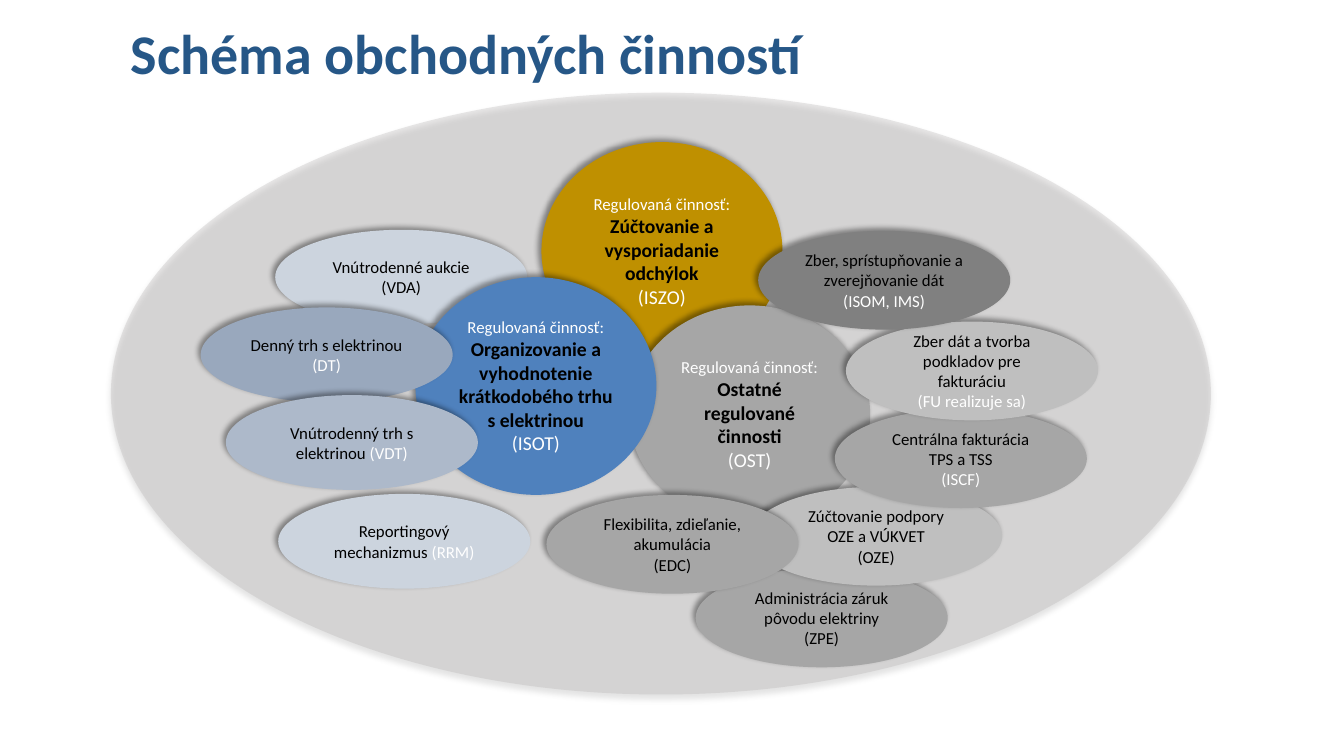
from pptx import Presentation
from pptx.dml.color import RGBColor as Rgb
from pptx.enum.shapes import MSO_SHAPE as Shape
from pptx.enum.text import MSO_ANCHOR as Anchor, PP_ALIGN as Align
from pptx.oxml import parse_xml
from pptx.oxml.ns import nsdecls
from pptx.util import Inches, Pt

COLORS = {
    "title": "265787", "black": "000000", "white": "FFFFFF", "backdrop": "AFABAB",
    "gold": "BF9000", "blue": "4F81BD", "pale": "CCD4DE", "slate": "99A8BD",
    "mist": "ADB9CA", "dark": "808080", "gray": "A6A6A6", "silver": "BFBFBF",
}
SMALL = {"size": Pt(12), "bold": False}
STRONG = {"size": Pt(14), "bold": True}
PLAIN = {"size": Pt(14), "bold": False}
TITLE = {"size": Pt(40), "bold": True}
CIRCLE = (2.39, 2.16)
LEFT_OVAL = (2.5, 0.94)
RIGHT_OVAL = (2.5, 0.98)


class SchemeSlide:
    """Draws the elements of the business scheme on one slide."""

    def __init__(self, page, font="Calibri"):
        self.page = page
        self.font = font

    def fill_text(self, frame, paragraphs, align, **margins):
        frame.word_wrap = True
        for name, value in margins.items():
            setattr(frame, name, Inches(value))
        for index, spans in enumerate(paragraphs):
            para = frame.add_paragraph() if index else frame.paragraphs[0]
            para.alignment = align
            for text, color, style in spans:
                span = para.add_run()
                span.text = text
                span.font.name = self.font
                span.font.color.rgb = Rgb.from_string(COLORS[color])
                for name, value in style.items():
                    setattr(span.font, name, value)

    def title(self, text, left, top, width, height):
        box = self.page.shapes.add_textbox(*map(Inches, (left, top, width, height)))
        box.text_frame.vertical_anchor = Anchor.BOTTOM
        self.fill_text(box.text_frame, [[(text, "title", TITLE)]], Align.LEFT)
        box.text_frame.paragraphs[0].line_spacing = 0.9

    def ellipse(self, place, size, color, angle=225, opacity=100):
        oval = self.page.shapes.add_shape(Shape.OVAL, *map(Inches, place + size))
        oval.fill.solid()
        oval.fill.fore_color.rgb = Rgb.from_string(COLORS[color])
        oval.line.fill.background()
        oval.shadow.inherit = False
        properties = oval._element.spPr
        if opacity < 100:
            tint = properties.xpath("a:solidFill/a:srgbClr")[0]
            tint.append(parse_xml(f'<a:alpha {nsdecls("a")} val="{opacity * 1000}"/>'))
        properties.xpath("a:effectLst")[0].append(parse_xml(
            f'<a:outerShdw {nsdecls("a")} blurRad="{Pt(4)}" dist="{Pt(3)}" '
            f'dir="{angle * 60000}" algn="ctr" rotWithShape="0">'
            f'<a:srgbClr val="{COLORS["black"]}"><a:alpha val="40000"/></a:srgbClr>'
            '</a:outerShdw>'))
        return oval

    def labelled(self, place, size, color, paragraphs, side=0.07, edge=0.04):
        frame = self.ellipse(place, size, color).text_frame
        frame.vertical_anchor = Anchor.MIDDLE
        self.fill_text(frame, paragraphs, Align.CENTER, margin_left=side,
                       margin_right=side, margin_top=edge, margin_bottom=edge)

    def circle(self, place, color, name, code, **margins):
        self.labelled(place, CIRCLE, color, [
            [("Regulovaná činnosť:", "white", SMALL)],
            [(name, "black", STRONG)],
            [(code, "white", PLAIN)]], **margins)

    def market(self, place, color, name, code=""):
        spans = [(name, "black", SMALL), (code, "white", SMALL)]
        self.labelled(place, LEFT_OVAL, color, [[span for span in spans if span[0]]])

    def service(self, place, color, name, code, code_color="white"):
        self.labelled(place, RIGHT_OVAL, color, [
            [(name, "black", SMALL)], [(code, code_color, SMALL)]])


def main():
    deck = Presentation()
    deck.slide_width, deck.slide_height = Inches(13.33), Inches(7.5)
    scheme = SchemeSlide(deck.slides.add_slide(deck.slide_layouts[6]))

    scheme.ellipse((1.1, 0.92), (10.91, 5.97), "backdrop", angle=90, opacity=28)
    scheme.market((2.73, 2.28), "pale", "Vnútrodenné aukcie (VDA)")
    scheme.circle((5.37, 1.41), "gold", "Zúčtovanie a vysporiadanie odchýlok",
                  "(ISZO)", side=0.1, edge=0.05)
    scheme.circle((6.24, 3.03), "gray", "Ostatné regulované činnosti", "(OST)")
    scheme.circle((4.12, 2.75), "blue",
                  "Organizovanie a vyhodnotenie krátkodobého trhu s elektrinou", "(ISOT)")
    scheme.market((2.76, 4.9), "pale", "Reportingový mechanizmus", " (RRM)")
    scheme.service((6.9, 5.64), "gray", "Administrácia záruk pôvodu elektriny",
                   "(ZPE)", "black")
    scheme.service((7.44, 4.83), "silver", "Zúčtovanie podpory OZE a VÚKVET",
                   "(OZE)", "black")
    scheme.service((8.28, 4.06), "gray", "Centrálna fakturácia TPS a TSS", "(ISCF)")
    scheme.service((8.39, 3.19), "silver", "Zber dát a tvorba podkladov pre fakturáciu",
                   "(FU realizuje sa)")
    scheme.market((1.99, 3.05), "slate", "Denný trh s elektrinou ", "(DT)")
    scheme.market((2.24, 3.92), "mist", "Vnútrodenný trh s elektrinou ", "(VDT)")
    scheme.service((7.52, 2.29), "dark", "Zber, sprístupňovanie a zverejňovanie dát",
                   "(ISOM, IMS)")
    scheme.title("Schéma obchodných činností", 1.2, 0.44, 10.11, 0.47)
    scheme.service((5.42, 4.91), "gray", "Flexibilita, zdieľanie, akumulácia",
                   "(EDC)", "black")
    deck.save("out.pptx")


if __name__ == "__main__":
    main()
